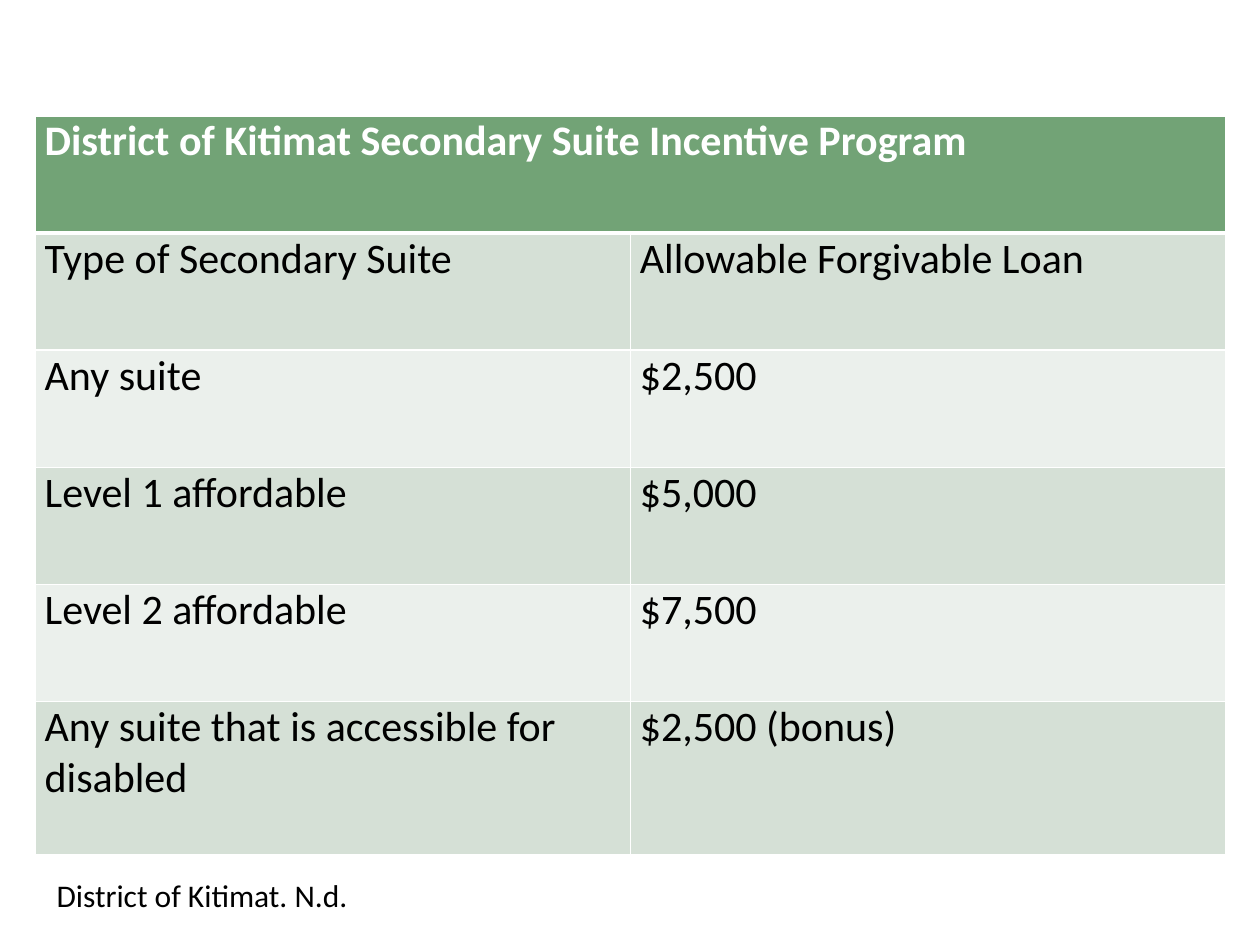
from lxml import etree
from pptx import Presentation
from pptx import util as u
from pptx.dml.color import RGBColor
from pptx.enum import text
from pptx.oxml.ns import qn

FONT = "Calibri"
WHITE, BLACK = "FFFFFF", "000000"
HEADER_GREEN = "72A376"
BANDS = ("D5E0D6", "EBF0EC")
PROGRAM = "District of Kitimat Secondary Suite Incentive Program"
LOANS = [
    ("Type of Secondary Suite", "Allowable Forgivable Loan"),
    ("Any suite", "$2,500"),
    ("Level 1 affordable", "$5,000"),
    ("Level 2 affordable", "$7,500"),
    ("Any suite that is accessible for disabled", "$2,500 (bonus)"),
]


def color(value):
    return RGBColor.from_string(value)


def add_run(frame, words, size, ink, bold=False):
    run = frame.paragraphs[0].add_run()
    run.text = words
    run.font.name = FONT
    run.font.size = u.Pt(size)
    run.font.bold = bold
    run.font.color.rgb = color(ink)


def set_borders(cell, top=1, bottom=1):
    properties = cell._tc.get_or_add_tcPr()
    for side, points in (("L", 1), ("R", 1), ("T", top), ("B", bottom)):
        line = etree.SubElement(properties, qn(f"a:ln{side}"), w=str(u.Pt(points)))
        fill = etree.SubElement(line, qn("a:solidFill"))
        etree.SubElement(fill, qn("a:srgbClr"), val=WHITE)


def style_cell(cell, fill, top=1, bottom=1):
    cell.margin_left = cell.margin_right = u.Cm(0.19)
    cell.margin_top = cell.margin_bottom = 0
    cell.vertical_anchor = text.MSO_ANCHOR.TOP
    set_borders(cell, top, bottom)
    cell.fill.solid()
    cell.fill.fore_color.rgb = color(fill)


def add_loan_table(slide):
    row_heights = [2.36] * len(LOANS) + [3.1]
    table = slide.shapes.add_table(
        len(row_heights), 2, u.Cm(0.71), u.Cm(2.34), u.Cm(24), u.Cm(sum(row_heights))
    ).table
    for column in table.columns:
        column.width = u.Cm(12)
    for row, height in zip(table.rows, row_heights):
        row.height = u.Cm(height)

    for heading in table.rows[0].cells:
        style_cell(heading, HEADER_GREEN, bottom=3)
    table.cell(0, 0).merge(table.cell(0, 1))
    add_run(table.cell(0, 0).text_frame, PROGRAM, 24, WHITE, bold=True)

    for index, loan in enumerate(LOANS):
        for cell, words in zip(table.rows[index + 1].cells, loan):
            style_cell(cell, BANDS[index % 2], top=3 if index == 0 else 1)
            add_run(cell.text_frame, words, 24, BLACK)


def add_citation(slide):
    citation = slide.shapes.add_textbox(u.Cm(0.89), u.Cm(17.53), u.Cm(11.8), u.Cm(1.03))
    frame = citation.text_frame
    frame.word_wrap = True
    frame.auto_size = text.MSO_AUTO_SIZE.SHAPE_TO_FIT_TEXT
    add_run(frame, "District of Kitimat. N.d.", 18, BLACK)


def main():
    deck = Presentation()
    deck.slide_width, deck.slide_height = u.Cm(25.4), u.Cm(19.05)
    slide = deck.slides.add_slide(deck.slide_layouts[6])
    add_loan_table(slide)
    add_citation(slide)
    deck.save("out.pptx")


if __name__ == "__main__":
    main()
